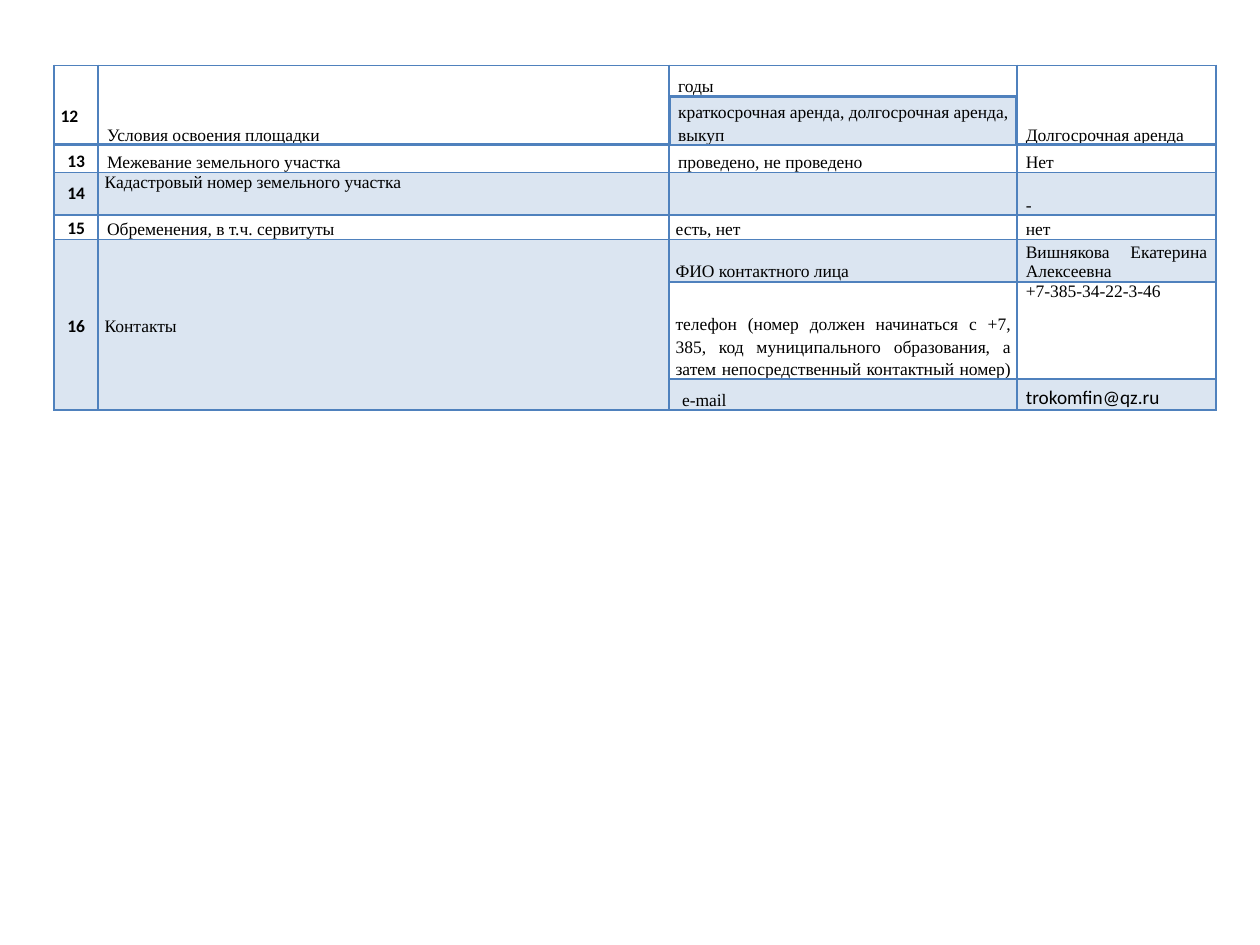
from dataclasses import dataclass

from lxml import etree
from pptx import Presentation
from pptx.dml.color import RGBColor
from pptx.enum.text import MSO_ANCHOR, PP_ALIGN
from pptx.oxml.ns import qn
from pptx.util import Cm, Pt

TOP, MIDDLE, BOTTOM = MSO_ANCHOR.TOP, MSO_ANCHOR.MIDDLE, MSO_ANCHOR.BOTTOM
LEFT, CENTER, JUSTIFY = PP_ALIGN.LEFT, PP_ALIGN.CENTER, PP_ALIGN.JUSTIFY


@dataclass(frozen=True)
class Theme:
    accent: str = "4F81BD"
    ink: str = "000000"
    tint_percent: int = 20
    body_font: str = "Times New Roman"
    label_font: str = "Calibri"
    body_size: float = 10
    email_size: float = 11
    thin: float = 1
    thick: float = 2
    spacing: float = 1.15
    narrow: float = 0.13
    wide: float = 0.18


THEME = Theme()
COLUMN_WIDTHS = [0.89, 11.51, 7.01, 4.01]
ROW_HEIGHTS = [0.63, 0.97, 0.56, 0.85, 0.5, 0.85, 1.96, 0.63]
MERGES = [(0, 0, 1), (0, 1, 1), (0, 3, 1), (5, 0, 7), (5, 1, 7)]
TINTED_ROWS = {3, 5, 7}
TINTED_CELLS = {(1, 2), (6, 0), (6, 1)}
THICK_EDGES = {(0, 2): "B", (1, 2): "LRT"}
for outer_column in (0, 1, 3):
    THICK_EDGES.update({(0, outer_column): "B", (1, outer_column): "B", (2, outer_column): "T"})

NUMBER = dict(font=THEME.label_font, bold=True, align=CENTER, anchor=MIDDLE, inset=THEME.narrow)
SINGLE = dict(align=JUSTIFY, spacing=1)
NARROW = dict(align=JUSTIFY, inset=THEME.narrow)

ENTRIES = {
    (0, 0): ("12", {**NUMBER, "align": LEFT, "anchor": BOTTOM, "bottom": 0.35}),
    (0, 1): ("Условия освоения площадки", {}),
    (0, 2): ("годы", dict(align=JUSTIFY)),
    (0, 3): ("Долгосрочная аренда", {}),
    (1, 2): ("краткосрочная аренда, долгосрочная аренда, выкуп", dict(align=JUSTIFY)),
    (2, 0): ("13", {**NUMBER, "anchor": BOTTOM, "inset": THEME.wide}),
    (2, 1): ("Межевание земельного участка", {}),
    (2, 2): ("проведено, не проведено", {}),
    (2, 3): ("Нет", SINGLE),
    (3, 0): ("14", {**NUMBER, "spacing": 1}),
    (3, 1): ("Кадастровый номер земельного участка",
             dict(anchor=TOP, inset=THEME.narrow, spacing=1)),
    (3, 3): ("-", SINGLE),
    (4, 0): ("15", NUMBER),
    (4, 1): ("Обременения, в т.ч. сервитуты", {}),
    (4, 2): ("есть, нет", NARROW),
    (4, 3): ("нет", SINGLE),
    (5, 0): ("16", NUMBER),
    (5, 1): ("Контакты", dict(anchor=MIDDLE, inset=THEME.narrow)),
    (5, 2): ("ФИО контактного лица", NARROW),
    (5, 3): ("Вишнякова Екатерина Алексеевна", SINGLE),
    (6, 2): ("телефон (номер должен начинаться с +7, 385, код муниципального "
             "образования, а затем непосредственный контактный номер) ", NARROW),
    (6, 3): ("+7-385-34-22-3-46", dict(anchor=TOP, spacing=1)),
    (7, 2): ("e-mail", dict(align=JUSTIFY, left=0.26)),
    (7, 3): ("trokomfin@qz.ru", {**SINGLE, "font": THEME.label_font, "size": THEME.email_size}),
}


def write(cell, text, *, font=THEME.body_font, size=THEME.body_size, bold=False,
          align=LEFT, anchor=BOTTOM, inset=THEME.wide, left=None, bottom=0,
          spacing=THEME.spacing):
    cell.margin_left = Cm(inset if left is None else left)
    cell.margin_right = Cm(inset)
    cell.margin_top = 0
    cell.margin_bottom = Cm(bottom)
    cell.vertical_anchor = anchor
    paragraph = cell.text_frame.paragraphs[0]
    paragraph.alignment = align
    paragraph.line_spacing = spacing
    if not text:
        etree.SubElement(paragraph._p, qn("a:endParaRPr"), sz=str(int(size * 100)))
        return
    run = paragraph.add_run()
    run.text = text
    run.font.name = font
    run.font.size = Pt(size)
    run.font.bold = bold
    run.font.color.rgb = RGBColor.from_string(THEME.ink)


def shade(cell, tinted):
    if not tinted:
        cell.fill.background()
        return
    cell.fill.solid()
    cell.fill.fore_color.rgb = RGBColor.from_string(THEME.accent)
    color = cell._tc.tcPr.find(qn("a:solidFill")).find(qn("a:srgbClr"))
    etree.SubElement(color, qn("a:alpha"), val=str(THEME.tint_percent * 1000))


def outline(cell, thick_edges):
    properties = cell._tc.get_or_add_tcPr()
    for position, edge in enumerate("LRTB"):
        width = THEME.thick if edge in thick_edges else THEME.thin
        line = etree.Element(qn(f"a:ln{edge}"), w=str(int(Pt(width))))
        fill = etree.SubElement(line, qn("a:solidFill"))
        etree.SubElement(fill, qn("a:srgbClr"), val=THEME.accent)
        properties.insert(position, line)


def add_site_table(slide):
    table = slide.shapes.add_table(
        len(ROW_HEIGHTS), len(COLUMN_WIDTHS), Cm(1.09), Cm(1.32),
        Cm(sum(COLUMN_WIDTHS)), Cm(sum(ROW_HEIGHTS))).table
    table.first_row = False
    table.horz_banding = False
    for column, width in zip(table.columns, COLUMN_WIDTHS):
        column.width = Cm(width)
    for row, height in zip(table.rows, ROW_HEIGHTS):
        row.height = Cm(height)
    for first_row, column, last_row in MERGES:
        table.cell(first_row, column).merge(table.cell(last_row, column))
    for row in range(len(ROW_HEIGHTS)):
        for column in range(len(COLUMN_WIDTHS)):
            place = (row, column)
            cell = table.cell(row, column)
            text, layout = ENTRIES.get(place, ("", {}))
            write(cell, text, **layout)
            shade(cell, row in TINTED_ROWS or place in TINTED_CELLS)
            outline(cell, THICK_EDGES.get(place, ""))


def main():
    presentation = Presentation()
    presentation.slide_width = Cm(25.4)
    presentation.slide_height = Cm(19.05)
    slide = presentation.slides.add_slide(presentation.slide_layouts[6])
    add_site_table(slide)
    presentation.save("out.pptx")


if __name__ == "__main__":
    main()
